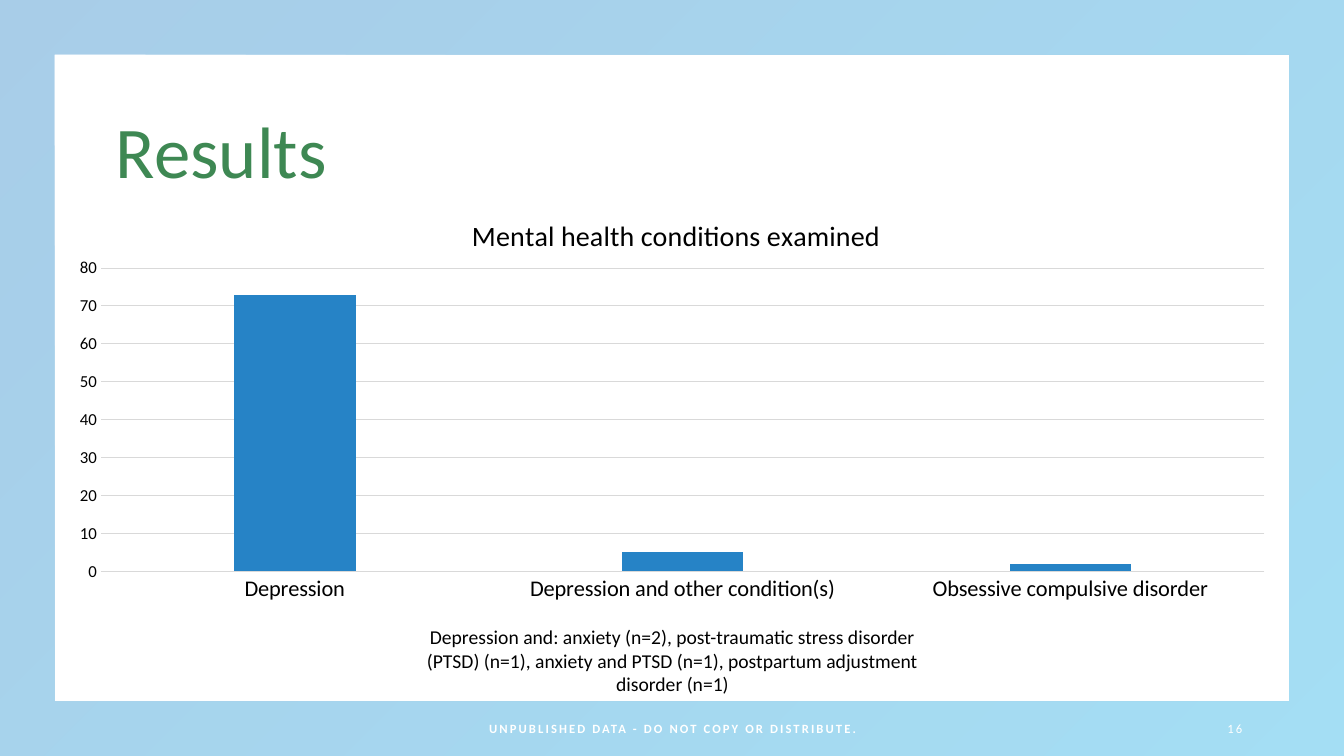
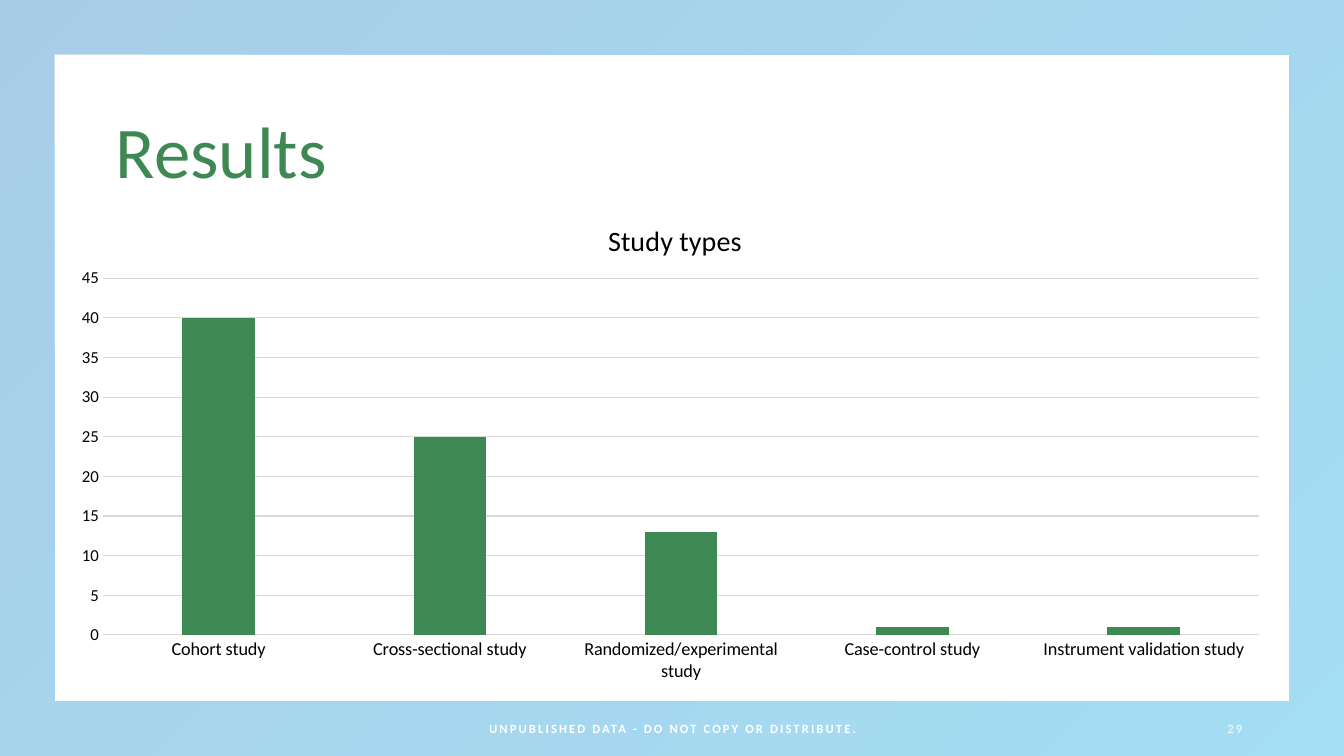
from dataclasses import dataclass
from typing import Optional

from lxml import etree
from pptx import Presentation
from pptx import util as u
from pptx.chart.data import CategoryChartData
from pptx.dml.color import RGBColor
from pptx.enum import chart as charts, shapes, text
from pptx.oxml.ns import qn

PX = 9144  # EMU per px, 100 px to the inch


@dataclass(frozen=True)
class Theme:
    font: str = "Calibri"
    black: str = "000000"
    white: str = "FFFFFF"
    green: str = "3E8853"
    blue: str = "2683C6"
    cyan: str = "1CADE4"
    grid: str = "D9D9D9"
    title: int = 52
    head: int = 20
    note: int = 14
    axis: int = 12
    base: int = 10
    foot: int = 9


THEME = Theme()


@dataclass(frozen=True)
class Box:
    left: int
    top: int
    width: int
    height: int

    def emu(self) -> tuple[int, ...]:
        return tuple(n * PX for n in (self.left, self.top, self.width, self.height))


@dataclass(frozen=True)
class Style:
    size: int
    color: str
    align: text.PP_ALIGN
    anchor: text.MSO_ANCHOR = text.MSO_ANCHOR.MIDDLE
    bold: bool = False
    track: int = 0  # letter spacing, hundredths of a point
    lead: Optional[float] = None
    fit: text.MSO_AUTO_SIZE = text.MSO_AUTO_SIZE.NONE


@dataclass(frozen=True)
class Page:
    number: int
    head: str
    values: dict[str, int]
    color: str
    label: int  # category label size
    chart: Box
    plot: Box
    spot: tuple[int, int]  # left and top of the chart title
    step: int
    top: int
    note: str = ""


TITLE = Style(THEME.title, THEME.green, text.PP_ALIGN.LEFT, lead=0.9)
FOOT = Style(THEME.foot, THEME.white, text.PP_ALIGN.CENTER, bold=True, track=150)
COUNT = Style(THEME.foot, THEME.white, text.PP_ALIGN.RIGHT, track=150)
NOTE = Style(THEME.note, THEME.black, text.PP_ALIGN.CENTER, text.MSO_ANCHOR.TOP,
             fit=text.MSO_AUTO_SIZE.SHAPE_TO_FIT_TEXT)

SLIDE = Box(0, 0, 1333, 750)
TITLE_BOX = Box(105, 81, 1150, 145)
FOOT_BOX = Box(442, 703, 450, 40)
COUNT_BOX = Box(942, 703, 300, 40)
NOTE_BOX = Box(392, 615, 550, 81)

PAGES = [
    Page(16, "Mental health conditions examined",
         {"Depression": 73, "Depression and other condition(s)": 5,
          "Obsessive compulsive disorder": 2},
         THEME.blue, 16, Box(54, 190, 1225, 417), Box(100, 266, 1154, 301),
         (463, 209), 10, 80,
         "Depression and: anxiety (n=2), post-traumatic stress disorder (PTSD) (n=1), "
         "anxiety and PTSD (n=1), postpartum adjustment disorder (n=1)"),
    Page(29, "Study types",
         {"Cohort study": 40, "Cross-sectional study": 25,
          "Randomized/experimental study": 13, "Case-control study": 1,
          "Instrument validation study": 1},
         THEME.green, 13, Box(57, 190, 1216, 498), Box(102, 276, 1147, 354),
         (598, 214), 5, 45),
]


def rgb(code: str) -> RGBColor:
    return RGBColor.from_string(code)


def dress(font, size: int, color: str = THEME.black, bold: bool = False) -> None:
    font.name, font.size, font.bold = THEME.font, u.Pt(size), bold
    font.color.rgb = rgb(color)


def write(shape, words: str, style: Style) -> None:
    frame = shape.text_frame
    frame.text = words
    frame.word_wrap = True
    frame.auto_size = style.fit
    frame.vertical_anchor = style.anchor
    para = frame.paragraphs[0]
    para.alignment = style.align
    if style.lead:
        para.line_spacing = style.lead
    dress(para.font, style.size, style.color, style.bold)
    if style.track:
        for props in shape.element.iter(qn("a:defRPr")):
            props.set("spc", str(style.track))


def label(slide, box: Box, words: str, style: Style) -> None:
    write(slide.shapes.add_textbox(*box.emu()), words, style)


def border(slide) -> None:
    """Draw the translucent gradient frame behind everything else."""
    frame = slide.shapes.add_shape(shapes.MSO_SHAPE.FRAME, *SLIDE.emu())
    frame.adjustments[0] = 0.072
    frame.shadow.inherit = False
    frame.line.fill.background()
    frame.fill.gradient()
    frame.fill.gradient_angle = 315
    for stop, color in zip(frame.fill.gradient_stops, (THEME.blue, THEME.cyan)):
        stop.color.rgb = rgb(color)
    for color in list(frame.element.iter(qn("a:srgbClr"))):
        etree.SubElement(color, qn("a:alpha")).set("val", "40000")
    slide.shapes.title.element.addprevious(frame.element)


def place(node, index: int, **parts: float) -> None:
    """Give a chart part a manual layout in fractions of the chart."""
    for old in node.findall(qn("c:layout")):
        node.remove(old)
    layout = etree.SubElement(node, qn("c:layout"))
    manual = etree.SubElement(layout, qn("c:manualLayout"))
    modes = {"xMode": "edge", "yMode": "edge"}
    if "w" in parts:
        modes = {"layoutTarget": "inner", **modes}
    for name, value in {**modes, **parts}.items():
        etree.SubElement(manual, qn(f"c:{name}")).set("val", str(value))
    node.insert(index, layout)


def rule(line) -> None:
    line.color.rgb = rgb(THEME.grid)
    line.width = u.Pt(0.75)


def graph(slide, page: Page) -> None:
    data = CategoryChartData()
    data.categories = list(page.values)
    data.add_series("Series 1", list(page.values.values()))
    chart = slide.shapes.add_chart(
        charts.XL_CHART_TYPE.COLUMN_CLUSTERED, *page.chart.emu(), data).chart
    dress(chart.font, THEME.base)
    chart.has_legend = False
    chart.has_title = True
    head = chart.chart_title.text_frame
    head.text = page.head
    dress(head.paragraphs[0].font, THEME.head)

    bars = chart.plots[0]
    bars.gap_width, bars.overlap, bars.vary_by_categories = 219, -27, False
    fill = bars.series[0].format.fill
    fill.solid()
    fill.fore_color.rgb = rgb(page.color)

    cats, vals = chart.category_axis, chart.value_axis
    for axis, size in ((cats, page.label), (vals, THEME.axis)):
        axis.major_tick_mark = axis.minor_tick_mark = charts.XL_TICK_MARK.NONE
        dress(axis.tick_labels.font, size)
    rule(cats.format.line)
    vals.format.line.fill.background()
    vals.has_major_gridlines = True
    rule(vals.major_gridlines.format.line)
    vals.minimum_scale, vals.maximum_scale, vals.major_unit = 0, page.top, page.step

    box, plot = page.chart, page.plot
    root = chart.element.find(qn("c:chart"))
    place(root.find(qn("c:title")), 1,
          x=(page.spot[0] - box.left) / box.width,
          y=(page.spot[1] - box.top) / box.height)
    place(root.find(qn("c:plotArea")), 0,
          x=(plot.left - box.left) / box.width,
          y=(plot.top - box.top) / box.height,
          w=plot.width / box.width, h=plot.height / box.height)


def build(deck, page: Page) -> None:
    slide = deck.slides.add_slide(deck.slide_layouts[5])
    border(slide)
    title = slide.shapes.title
    title.left, title.top, title.width, title.height = TITLE_BOX.emu()
    write(title, "Results", TITLE)
    label(slide, FOOT_BOX, "UNPUBLISHED DATA - DO NOT COPY OR DISTRIBUTE.", FOOT)
    label(slide, COUNT_BOX, str(page.number), COUNT)
    if page.note:
        label(slide, NOTE_BOX, page.note, NOTE)
    graph(slide, page)


def main() -> None:
    deck = Presentation()
    deck.slide_width, deck.slide_height = SLIDE.emu()[2:]
    for page in PAGES:
        build(deck, page)
    deck.save("out.pptx")


if __name__ == "__main__":
    main()
